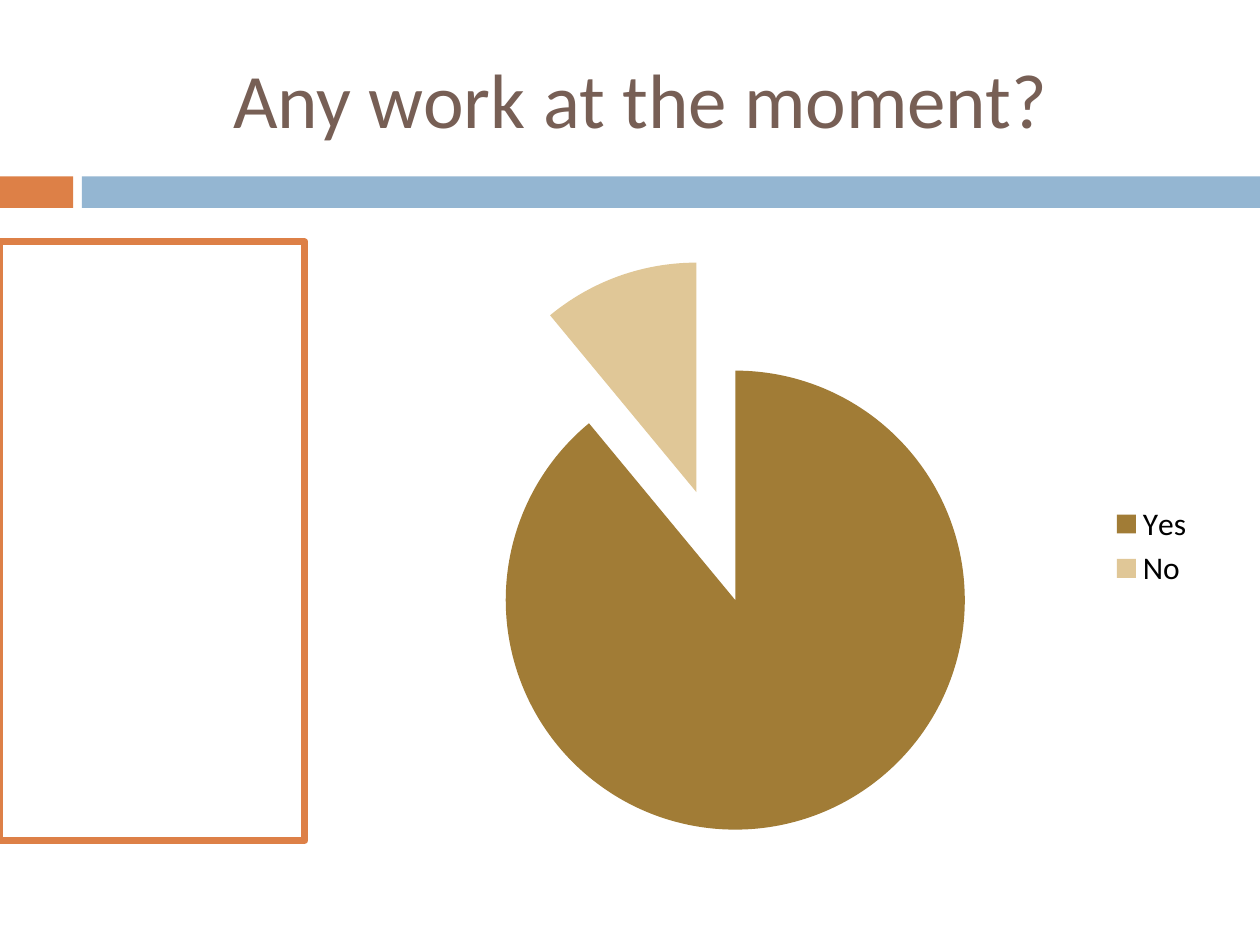
from pptx import Presentation
from pptx.chart.data import CategoryChartData as ChartData
from pptx.dml.color import RGBColor as RGB
from pptx.enum.chart import XL_CHART_TYPE as Kind, XL_LEGEND_POSITION as Side
from pptx.enum.shapes import MSO_SHAPE as Form
from pptx.enum.text import MSO_ANCHOR as Anchor, PP_ALIGN as Align
from pptx.oxml import parse_xml
from pptx.oxml.ns import nsdecls, qn
from pptx.util import Inches, Pt

COLORS = {
    "orange": "DD8047",
    "blue": "94B6D2",
    "brown": "775F55",
    "yes": "A17C36",
    "no": "E0C797",
    "text": "000000",
}
TONES = {name: RGB.from_string(code) for name, code in COLORS.items()}


def style(font, size, tone):
    looks = {"name": "Calibri", "size": Pt(size), "bold": False}
    for key, value in looks.items():
        setattr(font, key, value)
    font.color.rgb = TONES[tone]


def add_rect(left, top, width, height):
    rect = slide.shapes.add_shape(
        Form.RECTANGLE, Inches(left), Inches(top), Inches(width), Inches(height)
    )
    rect.shadow.inherit = False
    return rect


deck = Presentation()
deck.slide_width, deck.slide_height = Inches(10), Inches(7.5)
slide = deck.slides.add_slide(deck.slide_layouts[5])

for left, width, tone in [(0, 0.58, "orange"), (0.65, 9.35, "blue")]:
    band = add_rect(left, 1.4, width, 0.25)
    band.fill.solid()
    band.fill.fore_color.rgb = TONES[tone]
    band.line.fill.background()

title = slide.shapes.title
place = {"left": 0.67, "top": 0.3, "width": 8.83, "height": 0.95}
for key, value in place.items():
    setattr(title, key, Inches(value))
title.text_frame.text = "Any work at the moment?"
title.text_frame.vertical_anchor = Anchor.MIDDLE
line = title.text_frame.paragraphs[0]
line.alignment = Align.CENTER
style(line.runs[0].font, 44, "brown")

frame = add_rect(0, 1.92, 2.42, 4.75)
frame.fill.background()
frame.line.color.rgb = TONES["orange"]
frame.line.width = Pt(4)

data = ChartData()
data.categories = ["Yes", "No"]
data.add_series("Series 1", [89, 11])
chart = slide.shapes.add_chart(
    Kind.PIE, Inches(2.58), Inches(1.92), Inches(7), Inches(4.83), data
).chart
style(chart.font, 18, "text")
chart.has_title = False
chart.has_legend = True
chart.legend.position = Side.RIGHT
chart.legend.include_in_layout = False

plot = chart.plots[0]
plot.vary_by_categories = True
series = plot.series[0]
burst = parse_xml(f'<c:explosion {nsdecls("c")} val="25"/>')
series._element.find(qn("c:cat")).addprevious(burst)
for index, tone in enumerate(["yes", "no"]):
    slice_ = series.points[index].format
    slice_.fill.solid()
    slice_.fill.fore_color.rgb = TONES[tone]
    slice_.line.fill.background()
    point = series._element.findall(qn("c:dPt"))[index]
    point.find(qn("c:spPr")).addprevious(
        parse_xml(f'<c:explosion {nsdecls("c")} val="25"/>')
    )

deck.save("out.pptx")
